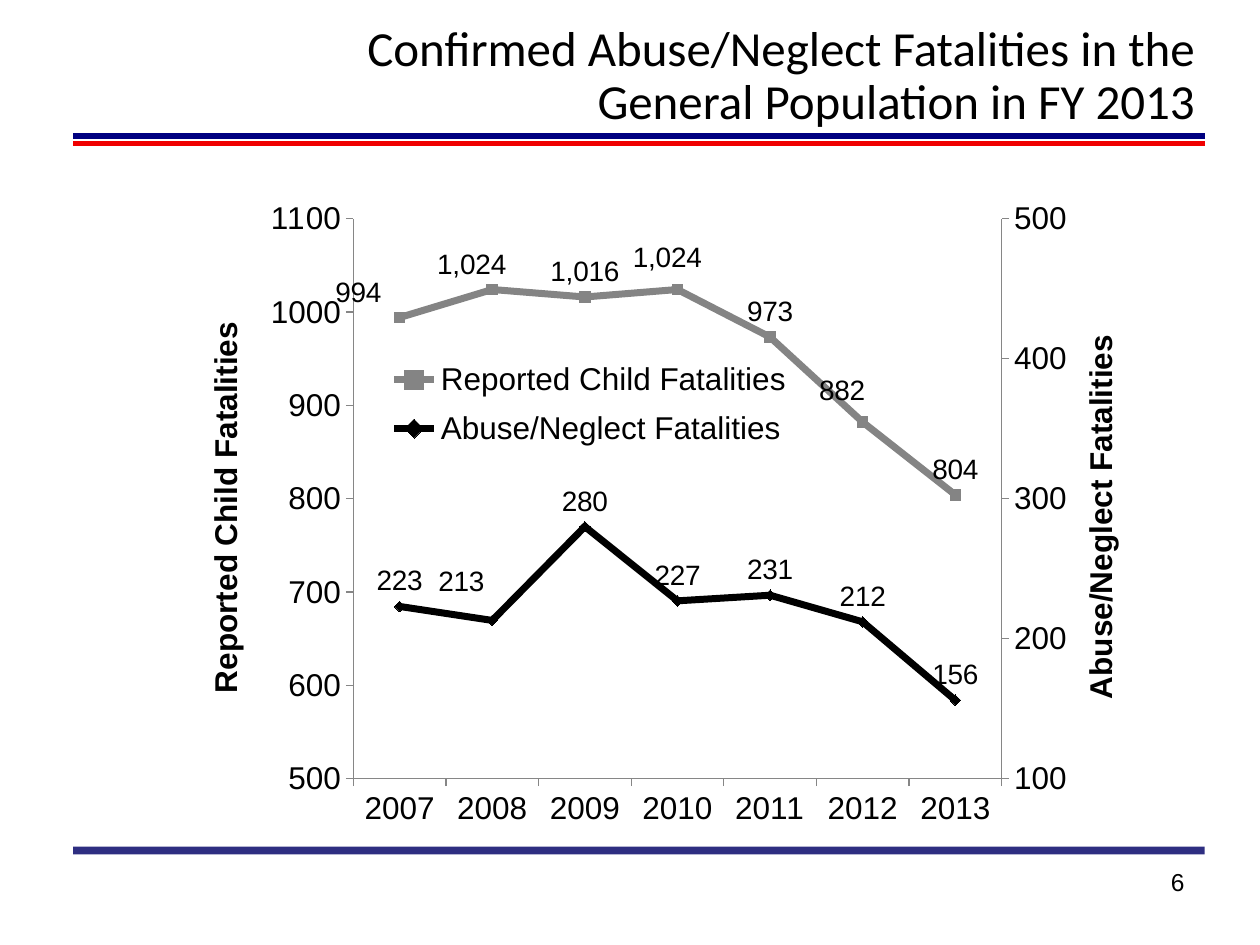
import copy
import lxml.etree
import pptx
import pptx.chart.axis
import pptx.chart.data
import pptx.dml.color
import pptx.enum.chart
import pptx.enum.shapes
import pptx.enum.text
import pptx.oxml.ns
import pptx.util
from dataclasses import dataclass

Inches = pptx.util.Inches
qn = pptx.oxml.ns.qn


@dataclass(frozen=True)
class Theme:
    heading_font: str = "Calibri"
    body_font: str = "Arial"
    text: str = "000000"
    axis: str = "868686"
    title_size: int = 28
    chart_size: int = 18
    label_size: int = 16
    number_size: int = 14


THEME = Theme()

# Content
TITLE = "Confirmed Abuse/Neglect Fatalities in the General Population in FY 2013"
SLIDE_NUMBER = "6"
YEARS = ["2007", "2008", "2009", "2010", "2011", "2012", "2013"]
MARKERS = pptx.enum.chart.XL_MARKER_STYLE
# Label shifts are fractions of the chart size, by point index
SERIES = [
    dict(name="Reported Child Fatalities", values=[994, 1024, 1016, 1024, 973, 882, 804],
         color="848484", marker=MARKERS.SQUARE, marker_size=6,
         shifts={0: (-0.04, 0), 1: (-0.02, 0), 2: (0, 0), 3: (-0.01, -0.01), 5: (-0.02, -0.01)}),
    dict(name="Abuse/Neglect Fatalities", values=[223, 213, 280, 227, 231, 212, 156],
         color="000000", marker=MARKERS.DIAMOND, marker_size=6,
         shifts={1: (-0.03, -0.02)}),
]
AXES = [  # title, minimum, maximum, title position
    ("Reported Child Fatalities", 500, 1100, (0.05, 0.18)),
    ("Abuse/Neglect Fatalities", 100, 500, (0.9, 0.2)),
]
RULES = [  # y, colour, width, opacity in percent
    (1.08, "000080", 3, 100),
    (1.14, "F00000", 3, 100),
    (6.75, "000066", 4.5, 82),
]
RULE_LEFT, RULE_RIGHT = 0.58, 9.56


def rgb(value):
    return pptx.dml.color.RGBColor.from_string(value)


def style_font(font, size, name=THEME.body_font, bold=False):
    font.size, font.name, font.bold = pptx.util.Pt(size), name, bold
    font.color.rgb = rgb(THEME.text)


def add_rule(slide, y, color, width, opacity):
    rule = slide.shapes.add_connector(
        pptx.enum.shapes.MSO_CONNECTOR.STRAIGHT,
        Inches(RULE_LEFT), Inches(y), Inches(RULE_RIGHT), Inches(y))
    rule.line.color.rgb = rgb(color)
    rule.line.width = pptx.util.Pt(width)
    properties = rule._element.spPr
    if opacity < 100:
        fill = properties.find(".//" + qn("a:srgbClr"))
        lxml.etree.SubElement(fill, qn("a:alpha")).set("val", str(opacity * 1000))
    lxml.etree.SubElement(properties, qn("a:effectLst"))


def add_text(slide, text, box, size, font_name, anchor, line_spacing=1):
    shape = slide.shapes.add_textbox(*map(Inches, box))
    frame = shape.text_frame
    frame.text = text
    frame.word_wrap = True
    frame.vertical_anchor = anchor
    paragraph = frame.paragraphs[0]
    paragraph.alignment = pptx.enum.text.PP_ALIGN.RIGHT
    paragraph.line_spacing = line_spacing
    style_font(paragraph.runs[0].font, size, font_name)


def place(parent, after, **values):
    """Give a chart part a manual layout, right after the named child."""
    for old in parent.findall(qn("c:layout")):
        parent.remove(old)
    layout = lxml.etree.Element(qn("c:layout"))
    manual = lxml.etree.SubElement(layout, qn("c:manualLayout"))
    for key, value in values.items():
        lxml.etree.SubElement(manual, qn("c:" + key)).set("val", str(value))
    if after is None:
        parent.insert(0, layout)
    else:
        parent.find(qn(after)).addnext(layout)


def split_second_axis(chart):
    """Move the second series to its own line plot with a right-hand axis."""
    area = chart._chartSpace.chart.plotArea
    first = area.find(qn("c:lineChart"))
    second = copy.deepcopy(first)
    first.remove(first.findall(qn("c:ser"))[1])
    second.remove(second.findall(qn("c:ser"))[0])
    first.addnext(second)
    category, value = chart.category_axis._element, chart.value_axis._element
    right, hidden = copy.deepcopy(value), copy.deepcopy(category)
    value.addnext(right)
    right.addnext(hidden)
    ids = {category.find(qn("c:axId")).get("val"): "5001",
           value.find(qn("c:axId")).get("val"): "5002"}
    for part in (second, right, hidden):
        for tag in ("c:axId", "c:crossAx"):
            for reference in part.findall(qn(tag)):
                reference.set("val", ids[reference.get("val")])
    right.find(qn("c:axPos")).set("val", "r")
    right.find(qn("c:crosses")).set("val", "max")
    pptx.chart.axis.CategoryAxis(hidden).visible = False
    return pptx.chart.axis.ValueAxis(right)


def style_value_axis(axis, title, minimum, maximum, position):
    axis.minimum_scale, axis.maximum_scale, axis.major_unit = minimum, maximum, 100
    axis_title = axis.axis_title
    axis_title.text_frame.text = title
    style_font(axis_title.text_frame.paragraphs[0].runs[0].font, THEME.chart_size, bold=True)
    element = axis_title._element
    body = element.find(".//" + qn("a:bodyPr"))
    body.set("rot", "-5400000")
    body.set("vert", "horz")
    place(element, "c:tx", xMode="edge", yMode="edge", x=position[0], y=position[1])


def style_series(series, details):
    above = pptx.enum.chart.XL_LABEL_POSITION.ABOVE
    color = rgb(details["color"])
    series.smooth = False
    series.format.line.color.rgb = color
    series.format.line.width = pptx.util.Pt(4)
    series.marker.style = details["marker"]
    series.marker.size = details["marker_size"]
    series.marker.format.fill.solid()
    series.marker.format.fill.fore_color.rgb = color
    series.marker.format.line.color.rgb = color
    labels = series.data_labels
    labels.show_value = True
    labels.position = above
    labels.number_format, labels.number_format_is_linked = "#,##0", False
    style_font(labels.font, THEME.label_size)
    for leader in labels._element.findall(qn("c:showLeaderLines")):
        leader.set("val", "0")
    for index, (x, y) in details["shifts"].items():
        label = series.points[index].data_label
        label.position = above
        style_font(label.font, THEME.label_size)
        element = next(item for item in labels._element.findall(qn("c:dLbl"))
                       if item.find(qn("c:idx")).get("val") == str(index))
        place(element, "c:idx", x=x, y=y)


def add_fatalities_chart(slide):
    data = pptx.chart.data.CategoryChartData(number_format="#,##0")
    data.categories = YEARS
    for details in SERIES:
        data.add_series(details["name"], details["values"])
    chart = slide.shapes.add_chart(
        pptx.enum.chart.XL_CHART_TYPE.LINE_MARKERS,
        Inches(1.17), Inches(1.58), Inches(8.17), Inches(5.17), data).chart
    chart.has_title = False
    style_font(chart.font, THEME.chart_size)

    # Axes: keep the left one at hand, since a second value axis joins it
    left_axis = chart.value_axis
    for axis in (chart.category_axis, left_axis):
        axis.has_major_gridlines = False
        axis.major_tick_mark = pptx.enum.chart.XL_TICK_MARK.OUTSIDE
        axis.format.line.color.rgb = rgb(THEME.axis)
        style_font(axis.tick_labels.font, THEME.chart_size)
    ticks = left_axis.tick_labels
    ticks.number_format, ticks.number_format_is_linked = "0", False
    right_axis = split_second_axis(chart)
    for axis, settings in zip((left_axis, right_axis), AXES):
        style_value_axis(axis, *settings)

    # Lines and labels
    for plot, details in zip(chart.plots, SERIES):
        plot.vary_by_categories = False
        style_series(plot.series[0], details)

    # Legend and plot area
    chart.has_legend = True
    chart.legend.position = pptx.enum.chart.XL_LEGEND_POSITION.RIGHT
    chart.legend.include_in_layout = True
    style_font(chart.legend.font, THEME.chart_size)
    place(chart.legend._element, "c:legendPos", xMode="edge", yMode="edge",
          x=0.23, y=0.23, w=0.4, h=0.17)
    place(chart._chartSpace.chart.plotArea, None, layoutTarget="inner",
          xMode="edge", yMode="edge", x=0.2, y=0.03, w=0.63, h=0.86)


def main():
    presentation = pptx.Presentation()
    presentation.slide_width, presentation.slide_height = Inches(10), Inches(7.5)
    slide = presentation.slides.add_slide(presentation.slide_layouts[6])
    for rule in RULES:
        add_rule(slide, *rule)
    anchors = pptx.enum.text.MSO_ANCHOR
    add_text(slide, TITLE, (2.5, 0.3, 7.08, 0.62), THEME.title_size,
             THEME.heading_font, anchors.MIDDLE, 0.9)
    add_text(slide, SLIDE_NUMBER, (7.17, 6.83, 2.33, 0.52), THEME.number_size,
             THEME.body_font, anchors.TOP)
    add_fatalities_chart(slide)
    presentation.save("out.pptx")


if __name__ == "__main__":
    main()
